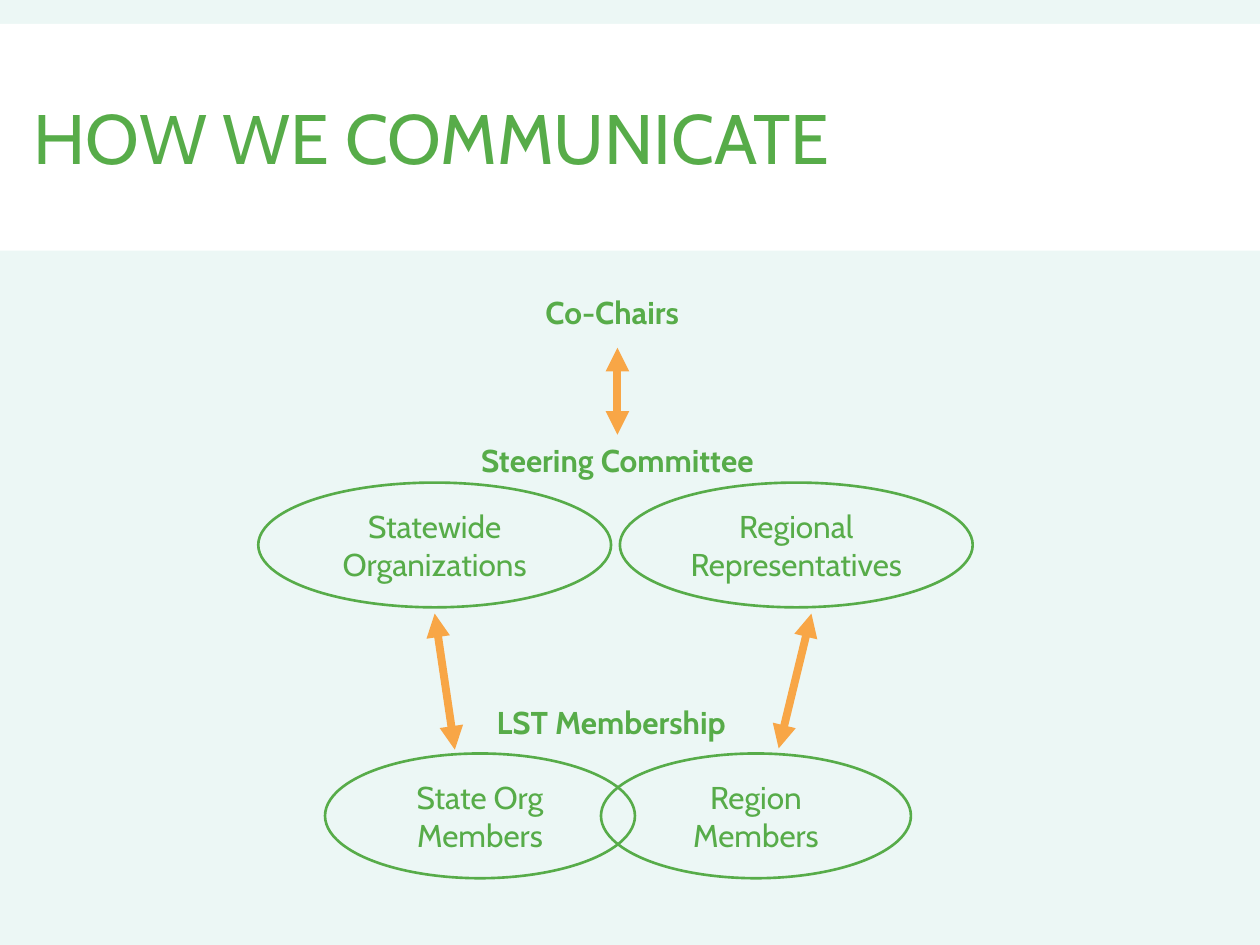
import pptx
import pptx.util
import pptx.dml.color
import pptx.enum.shapes
import pptx.enum.text
import pptx.oxml
import pptx.oxml.ns

Pt = pptx.util.Pt
MSO = pptx.enum.shapes.MSO_SHAPE
ALIGN = pptx.enum.text.PP_ALIGN
ANCHOR = pptx.enum.text.MSO_ANCHOR

GREEN, ORANGE, WHITE, PALE = "57AC49", "F8A646", "FFFFFF", "ECF7F5"
TITLE = ("HOW WE COMMUNICATE", (12.24, 22.32, 577.44, 118.8))
HEADINGS = [
    ("Co-Chairs", (259.92, 164.16, 180, 28.8)),
    ("Steering Committee", (262.8, 248.4, 180, 28.8)),
    ("LST Membership", (258.48, 398.16, 181.44, 28.8)),
]
GROUPS = [
    (275.76, 201.6, [("Statewide Organizations", 147.6), ("Regional Representatives", 354.24)]),
    (430.56, 177.12, [("State Org Members", 185.76), ("Region Members", 343.44)]),
]
OVAL_HEIGHT = 71.28
ARROWS = [
    (352.8, 198.72, 352.8, 248.4),
    (248.4, 350.64, 259.92, 428.4),
    (463.68, 350.64, 444.96, 427.68),
]


def rgb(value):
    return pptx.dml.color.RGBColor.from_string(value)


def write(sp, text, align, anchor, size=18, bold=False, spacing=None):
    tf = sp.text_frame
    for name, value in {"word_wrap": True, "vertical_anchor": anchor}.items():
        setattr(tf, name, value)
    p = tf.paragraphs[0]
    for name, value in {"alignment": align, "line_spacing": spacing}.items():
        setattr(p, name, value)
    r = p.add_run()
    r.text = text
    for name, value in {"name": "Cabin", "size": Pt(size), "bold": bold}.items():
        setattr(r.font, name, value)
    r.font.color.rgb = rgb(GREEN)


def add_shape(s, kind, box):
    sp = s.shapes.add_shape(kind, *map(Pt, box))
    sp.shadow.inherit = False
    return sp


def add_arrow(s, ends):
    cx = s.shapes.add_connector(pptx.enum.shapes.MSO_CONNECTOR.STRAIGHT, *map(Pt, ends))
    cx.line.color.rgb = rgb(ORANGE)
    cx.line.width = Pt(4.5)
    ln = cx.line._get_or_add_ln()
    for tag in ("a:headEnd", "a:tailEnd"):
        end = pptx.oxml.parse_xml(f'<{tag} {pptx.oxml.ns.nsdecls("a")} type="triangle"/>')
        ln.append(end)
    ln.addnext(pptx.oxml.parse_xml(f'<a:effectLst {pptx.oxml.ns.nsdecls("a")}/>'))


def main():
    prs = pptx.Presentation()
    prs.slide_width, prs.slide_height = Pt(720), Pt(540)
    s = prs.slides.add_slide(prs.slide_layouts[6])
    s.background.fill.solid()
    s.background.fill.fore_color.rgb = rgb(PALE)

    band = add_shape(s, MSO.RECTANGLE, (0, 13.68, 720, 129.6))
    band.fill.solid()
    band.fill.fore_color.rgb = rgb(WHITE)
    band.line.fill.background()

    text, box = TITLE
    title = s.shapes.add_textbox(*map(Pt, box))
    write(title, text, ALIGN.LEFT, ANCHOR.MIDDLE, size=40, spacing=0.85)

    for text, box in HEADINGS:
        heading = s.shapes.add_textbox(*map(Pt, box))
        write(heading, text, ALIGN.CENTER, ANCHOR.TOP, bold=True)

    for top, width, members in GROUPS:
        for text, left in members:
            oval = add_shape(s, MSO.OVAL, (left, top, width, OVAL_HEIGHT))
            oval.fill.background()
            oval.line.color.rgb = rgb(GREEN)
            oval.line.width = Pt(1.5)
            write(oval, text, ALIGN.CENTER, ANCHOR.MIDDLE)

    for ends in ARROWS:
        add_arrow(s, ends)

    prs.save("out.pptx")


if __name__ == "__main__":
    main()
